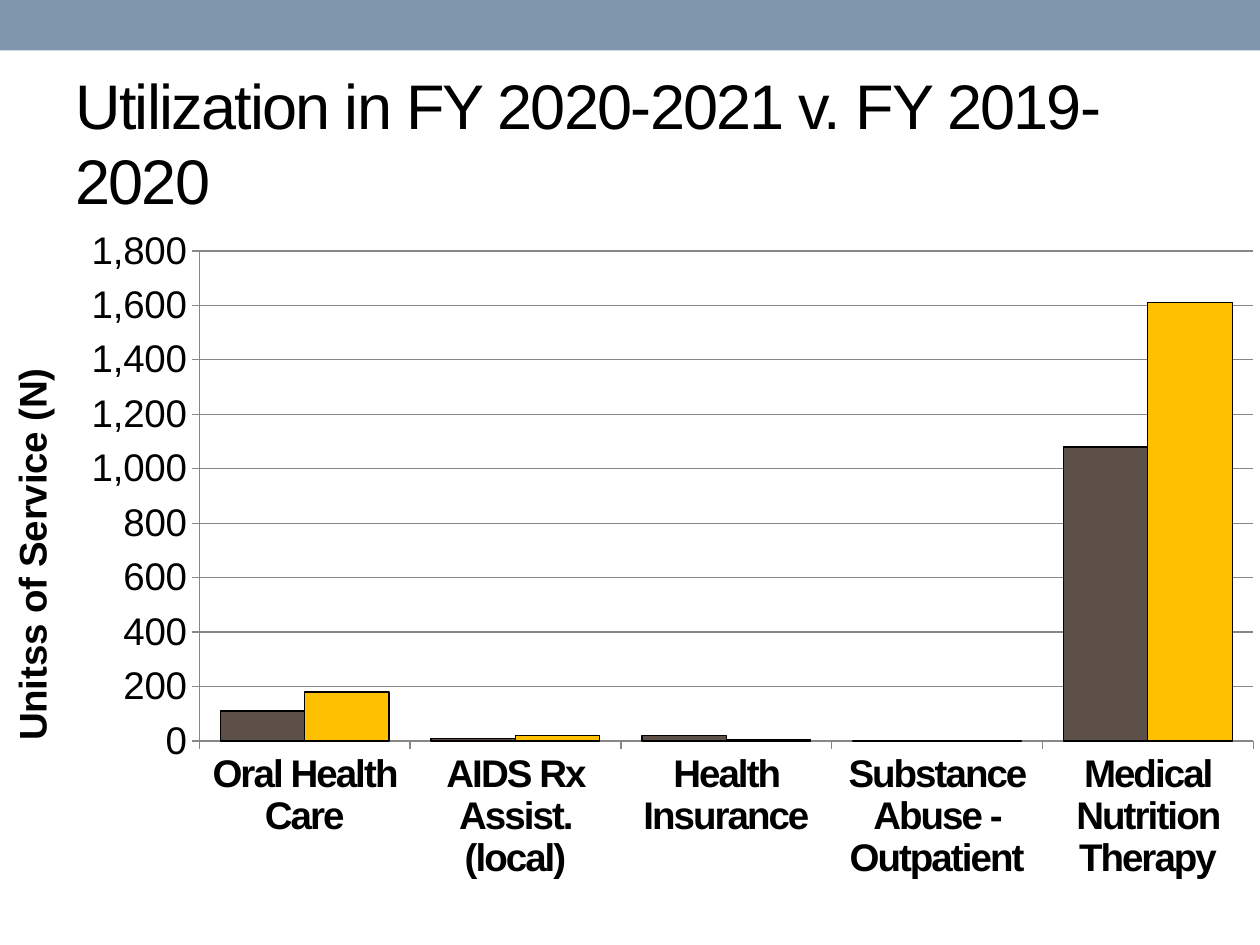
from lxml import etree
from pptx import Presentation
from pptx.chart.data import CategoryChartData
from pptx.dml.color import RGBColor
from pptx.enum.chart import XL_CHART_TYPE, XL_TICK_MARK
from pptx.enum.shapes import MSO_SHAPE
from pptx.enum.text import MSO_ANCHOR, PP_ALIGN
from pptx.oxml import parse_xml
from pptx.oxml.ns import nsdecls
from pptx.util import Pt

COLUMNS = XL_CHART_TYPE.COLUMN_CLUSTERED
TICK_OUT = XL_TICK_MARK.OUTSIDE
RECT = MSO_SHAPE.RECTANGLE
MIDDLE = MSO_ANCHOR.MIDDLE
LEFT = PP_ALIGN.LEFT

CATEGORIES = ["Oral Health Care", "AIDS Rx Assist. (local)", "Health Insurance",
              "Substance Abuse - Outpatient", "Medical Nutrition Therapy"]
SERIES = [("FY 2020-2021", [110, 10, 20, 0, 1080], "5C5048"),
          ("FY 2019-2020", [180, 20, 5, 0, 1610], "FFC000")]


def rgb(value):
    return RGBColor.from_string(value)


def set_font(font, size, color="000000", bold=False, name="Arial", spacing=0):
    font.size, font.bold, font.name = Pt(size), bold, name
    font.color.rgb = rgb(color)
    if spacing:
        font._element.set("spc", str(int(spacing * 100)))


def write(tf, text, align=None, **style):
    p = tf.paragraphs[0]
    p.alignment = align
    r = p.add_run()
    r.text = text
    set_font(r.font, **style)


def set_line(line, color, width=0.75):
    line.color.rgb = rgb(color)
    line.width = Pt(width)


def set_plot_layout(chart, x, y, w, h):
    plot_area = chart._chartSpace.chart.plotArea
    for old in plot_area.findall("{*}layout"):
        plot_area.remove(old)
    layout = parse_xml(f"<c:layout {nsdecls('c')}><c:manualLayout/></c:layout>")
    values = {"layoutTarget": "inner", "xMode": "edge", "yMode": "edge",
              "x": x, "y": y, "w": w, "h": h}
    for tag, value in values.items():
        name = etree.QName(layout.nsmap["c"], tag)
        etree.SubElement(layout[0], name).set("val", str(value))
    plot_area.insert(0, layout)


class Deck:
    text_size = 22
    axis_color = "878787"
    outline = "000000"

    def __init__(self, prs):
        self.s = prs.slides.add_slide(prs.slide_layouts[6])

    def band(self, x, y, w, h, color):
        sp = self.s.shapes.add_shape(RECT, Pt(x), Pt(y), Pt(w), Pt(h))
        sp.shadow.inherit = False
        sp.fill.solid()
        sp.fill.fore_color.rgb = rgb(color)
        sp.line.fill.background()

    def title(self, x, y, w, h, text):
        tf = self.s.shapes.add_textbox(Pt(x), Pt(y), Pt(w), Pt(h)).text_frame
        tf.word_wrap = True
        tf.vertical_anchor = MIDDLE
        write(tf, text, align=LEFT, size=36, spacing=-1)

    def column_chart(self, x, y, w, h, categories, series, axis_title):
        data = CategoryChartData(number_format="#,##0")
        data.categories = categories
        for name, values, _ in series:
            data.add_series(name, values)
        chart = self.s.shapes.add_chart(COLUMNS, Pt(x), Pt(y), Pt(w), Pt(h), data).chart
        chart.has_legend = False
        chart.has_title = False
        set_font(chart.font, self.text_size)
        plot = chart.plots[0]
        plot.gap_width, plot.overlap = 50, 0
        plot.vary_by_categories = False
        for ser, (_, _, color) in zip(plot.series, series):
            ser.format.fill.solid()
            ser.format.fill.fore_color.rgb = rgb(color)
            set_line(ser.format.line, self.outline)
        cat, val = chart.category_axis, chart.value_axis
        for axis in (cat, val):
            axis.major_tick_mark = TICK_OUT
            set_line(axis.format.line, self.axis_color)
        set_font(cat.tick_labels.font, self.text_size, bold=True, spacing=-1)
        set_font(val.tick_labels.font, self.text_size)
        val.minimum_scale, val.maximum_scale, val.major_unit = 0, 1800, 200
        val.tick_labels.number_format = "#,##0"
        val.tick_labels.number_format_is_linked = False
        val.has_major_gridlines = True
        set_line(val.major_gridlines.format.line, self.axis_color)
        write(val.axis_title.text_frame, axis_title, size=self.text_size, bold=True)
        set_plot_layout(chart, 0.164, 0.033, 0.824, 0.69)


def main():
    prs = Presentation()
    prs.slide_width, prs.slide_height = Pt(720), Pt(540)
    deck = Deck(prs)
    deck.band(0, 0, 720, 28.8, "7E97AD")
    deck.title(36, 42, 648, 78, "Utilization in FY 2020-2021 v. FY 2019-2020")
    deck.column_chart(-6, 130, 731, 406, CATEGORIES, SERIES, "Unitss of Service (N)")
    prs.save("out.pptx")


if __name__ == "__main__":
    main()
